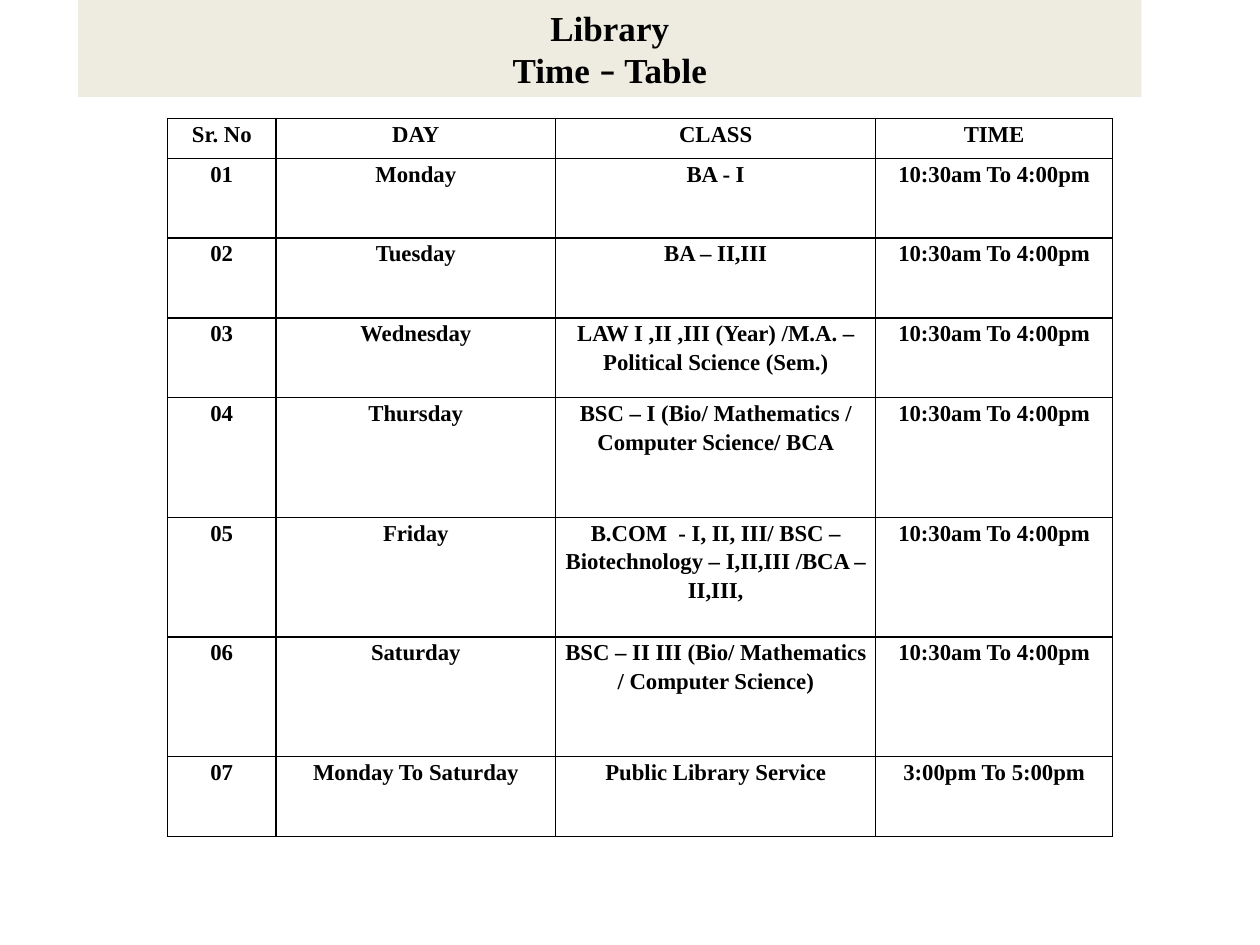
from dataclasses import dataclass

from lxml.etree import SubElement
from pptx import Presentation
from pptx.dml.color import RGBColor
from pptx.enum.shapes import MSO_SHAPE
from pptx.enum.text import MSO_ANCHOR, PP_ALIGN
from pptx.oxml.ns import qn
from pptx.util import Inches, Pt


@dataclass(frozen=True)
class Theme:
    ink: str = "000000"
    banner: str = "EEECE1"
    font: str = "Times New Roman"
    dash_font: str = "Calibri"
    title_size: float = 20
    table_size: float = 13
    line_spacing: float = 1.15
    border_width: float = 1


class SlideBuilder:
    """Draws on one slide; places and sizes are shares of the slide."""

    def __init__(self, presentation, theme):
        self.theme = theme
        self.width = presentation.slide_width
        self.height = presentation.slide_height
        self.slide = presentation.slides.add_slide(presentation.slide_layouts[6])

    def box(self, left, top, width, height):
        return (int(left * self.width), int(top * self.height),
                int(width * self.width), int(height * self.height))

    def style(self, paragraph, size):
        paragraph.alignment = PP_ALIGN.CENTER
        font = paragraph.font
        font.name, font.size, font.bold = self.theme.font, Pt(size), True
        font.color.rgb = RGBColor.from_string(self.theme.ink)

    def banner(self, lines, *place):
        """Each line is a list of (text, font name or None) runs."""
        shape = self.slide.shapes.add_shape(MSO_SHAPE.RECTANGLE, *self.box(*place))
        shape.shadow.inherit = False
        shape.fill.solid()
        shape.fill.fore_color.rgb = RGBColor.from_string(self.theme.banner)
        shape.line.fill.background()
        frame = shape.text_frame
        frame.word_wrap = True
        frame.vertical_anchor = MSO_ANCHOR.MIDDLE
        for index, runs in enumerate(lines):
            paragraph = frame.add_paragraph() if index else frame.paragraphs[0]
            self.style(paragraph, self.theme.title_size)
            for text, font_name in runs:
                run = paragraph.add_run()
                run.text = text
                if font_name:
                    run.font.name = font_name

    def border(self, cell):
        properties = cell._tc.get_or_add_tcPr()
        for index, side in enumerate(("lnL", "lnR", "lnT", "lnB")):
            line = properties.makeelement(
                qn(f"a:{side}"), {"w": str(Pt(self.theme.border_width))})
            fill = SubElement(line, qn("a:solidFill"))
            SubElement(fill, qn("a:srgbClr"), val=self.theme.ink)
            properties.insert(index, line)

    def table(self, rows, column_shares, row_units, *place):
        """Row heights follow row_units; column widths are shares of the slide."""
        left, top, width, height = self.box(*place)
        table = self.slide.shapes.add_table(
            len(rows), len(column_shares), left, top, width, height).table
        table.first_row = table.horz_banding = False
        for column, share in zip(table.columns, column_shares):
            column.width = int(share * self.width)
        for row, units, texts in zip(table.rows, row_units, rows):
            row.height = int(height * units / sum(row_units))
            for cell, text in zip(row.cells, texts):
                self.cell(cell, text)

    def cell(self, cell, text):
        cell.fill.background()
        self.border(cell)
        cell.margin_left = cell.margin_right = Inches(0.06)
        cell.margin_top = cell.margin_bottom = 0
        paragraph = cell.text_frame.paragraphs[0]
        paragraph.text = text
        paragraph.line_spacing = self.theme.line_spacing
        self.style(paragraph, self.theme.table_size)


HEADINGS = ("Sr. No", "DAY", "CLASS", "TIME")
DAY_HOURS = "10:30am To 4:00pm"
# Day, class, opening hours, height in header rows
SESSIONS = (
    ("Monday", "BA - I", DAY_HOURS, 2),
    ("Tuesday", "BA – II,III", DAY_HOURS, 2),
    ("Wednesday", "LAW I ,II ,III (Year) /M.A. – Political Science (Sem.)",
     DAY_HOURS, 2),
    ("Thursday", "BSC – I (Bio/ Mathematics / Computer Science/ BCA", DAY_HOURS, 3),
    ("Friday", "B.COM  - I, II, III/ BSC – Biotechnology – I,II,III /BCA – II,III,",
     DAY_HOURS, 3),
    ("Saturday", "BSC – II III (Bio/ Mathematics / Computer Science)", DAY_HOURS, 3),
    ("Monday To Saturday", "Public Library Service", "3:00pm To 5:00pm", 2),
)


def main():
    presentation = Presentation()
    presentation.slide_width, presentation.slide_height = Inches(10), Inches(7.5)
    theme = Theme()
    builder = SlideBuilder(presentation, theme)

    title = [[("Library", None)],
             [("Time ", None), ("–", theme.dash_font), (" Table", None)]]
    builder.banner(title, 0.062, 0, 0.844, 0.77 / 7.5)

    rows = [HEADINGS] + [(f"{number:02}", *session[:3])
                         for number, session in enumerate(SESSIONS, 1)]
    row_units = [1] + [session[3] for session in SESSIONS]
    builder.table(rows, (0.086, 0.222, 0.254, 0.188), row_units,
                  0.133, 0.94 / 7.5, 0.75, 0.76)
    presentation.save("out.pptx")


if __name__ == "__main__":
    main()
